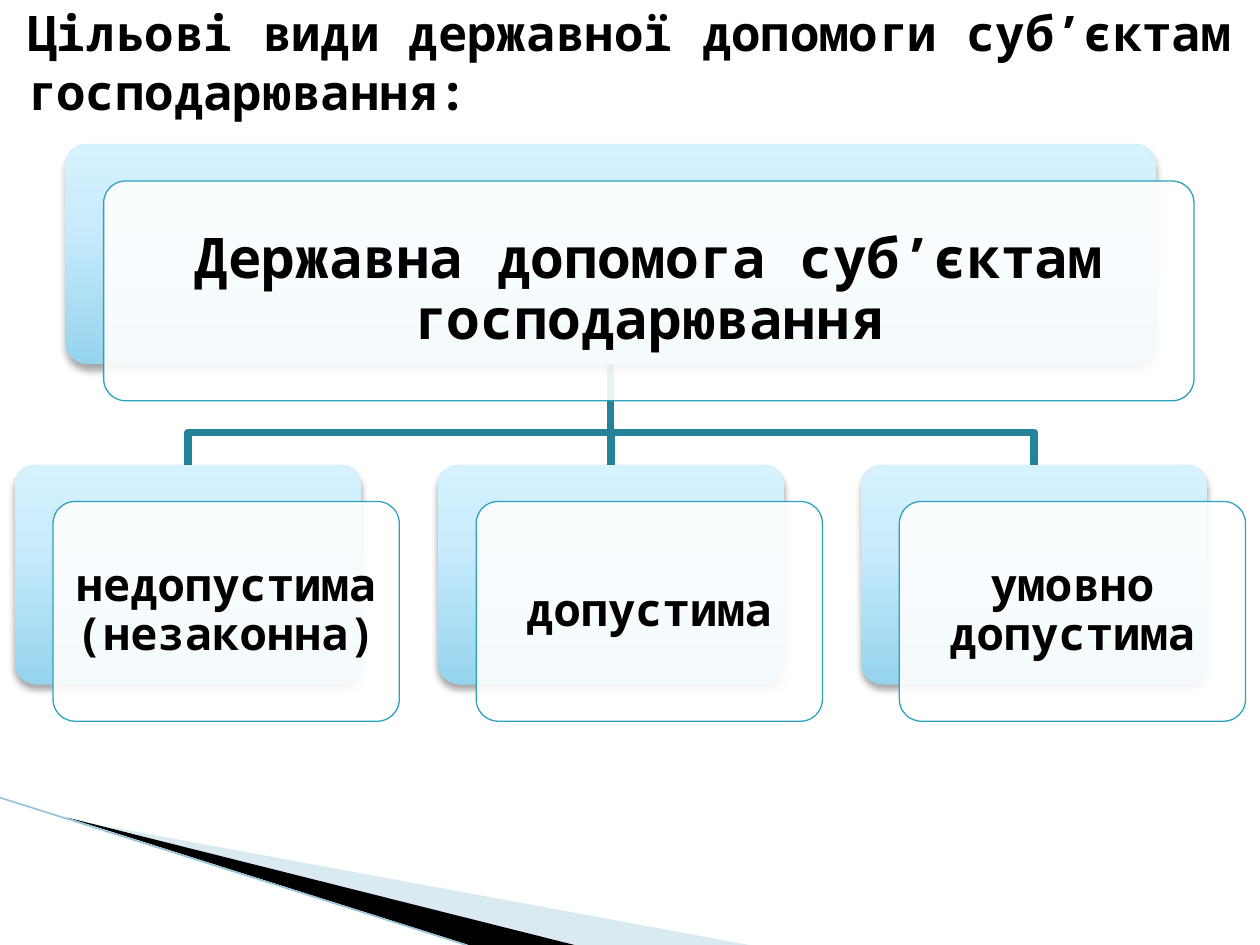
import copy

import pptx
import pptx.dml.color
import pptx.enum.shapes
import pptx.enum.text
import pptx.oxml
import pptx.oxml.ns
import pptx.util

Cm = pptx.util.Cm
Pt = pptx.util.Pt
RGBColor = pptx.dml.color.RGBColor
qn = pptx.oxml.ns.qn
ROUNDED = pptx.enum.shapes.MSO_SHAPE.ROUNDED_RECTANGLE
MIDDLE = pptx.enum.text.MSO_ANCHOR.MIDDLE

BLACK = RGBColor(0x00, 0x00, 0x00)
WHITE = RGBColor(0xFF, 0xFF, 0xFF)
PALE_BLUE = RGBColor(0xA0, 0xCB, 0xDC)
EDGE_BLUE = RGBColor(0x97, 0xC5, 0xD8)
BRANCH_TEAL = RGBColor(0x24, 0x82, 0x99)
CARD_TEAL = RGBColor(0x2D, 0xA2, 0xBF)
GRADIENT = [(0, RGBColor(0x96, 0xD4, 0xEE)),
            (0.65, RGBColor(0xC9, 0xEC, 0xFC)),
            (1, RGBColor(0xD7, 0xF2, 0xFF))]
FONT = "Noto Sans Mono"
NS = 'xmlns:a="http://schemas.openxmlformats.org/drawingml/2006/main"'
SHADOW = (f'<a:effectLst {NS}><a:outerShdw blurRad="50800" dist="38100" dir="5400000" '
          'rotWithShape="0"><a:srgbClr val="000000"><a:alpha val="35000"/></a:srgbClr>'
          '</a:outerShdw></a:effectLst>')


def draw_path(points, closed):
    """Add a freeform through points given in centimetres."""
    corners = [(Cm(x), Cm(y)) for x, y in points]
    builder = page.shapes.build_freeform(*corners[0])
    builder.add_line_segments(corners[1:], close=closed)
    shape = builder.convert_to_shape()
    shape.shadow.inherit = False
    return shape


def set_opacity(shape, percent):
    color = shape._element.spPr.find(qn("a:solidFill"))[0]
    color.append(pptx.oxml.parse_xml(f'<a:alpha {NS} val="{percent * 1000}"/>'))


deck = pptx.Presentation()
deck.slide_width = Cm(25.4)
deck.slide_height = Cm(19.05)
page = deck.slides.add_slide(deck.slide_layouts[5])

# Corner decoration
wedges = [([(1.4, 16.52), (15.1, 19.05), (11.58, 19.05)], PALE_BLUE, 40),
          ([(1.35, 16.48), (11.58, 19.05), (9.45, 19.05)], BLACK, 100)]
for points, color, opacity in wedges:
    wedge = draw_path(points, True)
    wedge.fill.solid()
    wedge.fill.fore_color.rgb = color
    set_opacity(wedge, opacity)
    wedge.line.fill.background()

edge = page.shapes.add_connector(pptx.enum.shapes.MSO_CONNECTOR.STRAIGHT,
                                 Cm(0), Cm(16.08), Cm(9.4), Cm(19.05))
edge.line.color.rgb = EDGE_BLUE
edge.line.width = Pt(0.95)
edge._element.spPr.append(pptx.oxml.parse_xml(f"<a:effectLst {NS}/>"))

# Hierarchy: one root above three kinds of aid
card_height = 4.43
offset_x, offset_y = 0.77, 0.74
root_left, root_top, root_width = 1.32, 2.91, 21.98
kind_left, kind_top, kind_width, kind_step = 0.3, 9.37, 6.98, 8.53
kinds = ["недопустима (незаконна)", "допустима", "умовно допустима"]

root_center = root_left + root_width / 2
root_bottom = root_top + card_height
elbow_y = 8.72
cards = [("Державна допомога суб’єктам господарювання",
          root_left, root_top, root_width, 32, 0.33)]
for index, label in enumerate(kinds):
    left = kind_left + index * kind_step
    center = left + kind_width / 2
    branch = draw_path([(root_center, root_bottom), (root_center, elbow_y),
                        (center, elbow_y), (center, kind_top)], False)
    branch.fill.background()
    branch.line.color.rgb = BRANCH_TEAL
    branch.line.width = Pt(4.33)
    cards.append((label, left, kind_top, kind_width, 26, 0.28))

for label, left, top, width, size, inset in cards:
    back = page.shapes.add_shape(ROUNDED, Cm(left), Cm(top), Cm(width), Cm(card_height))
    back.adjustments[0] = 0.1
    back.line.fill.background()
    back.fill.gradient()
    back.fill.gradient_angle = 90
    stop_list = back._element.spPr.find(qn("a:gradFill")).find(qn("a:gsLst"))
    stop_list.append(copy.deepcopy(stop_list[-1]))
    for stop, (position, color) in zip(back.fill.gradient_stops, GRADIENT):
        stop.position = position
        stop.color.rgb = color
    back._element.spPr.append(pptx.oxml.parse_xml(SHADOW))

    card = page.shapes.add_shape(ROUNDED, Cm(left + offset_x), Cm(top + offset_y),
                                 Cm(width), Cm(card_height))
    card.adjustments[0] = 0.1
    card.shadow.inherit = False
    card.fill.solid()
    card.fill.fore_color.rgb = WHITE
    set_opacity(card, 90)
    card.line.color.rgb = CARD_TEAL
    card.line.width = Pt(0.75)

    frame = card.text_frame
    frame.text = label
    frame.word_wrap = True
    frame.vertical_anchor = MIDDLE
    frame.margin_left = frame.margin_right = Cm(inset)
    frame.margin_top = frame.margin_bottom = Cm(inset)
    para = frame.paragraphs[0]
    para.alignment = pptx.enum.text.PP_ALIGN.CENTER
    para.line_spacing = 0.9
    span = para.runs[0]
    span.font.name = FONT
    span.font.size = Pt(size)
    span.font.bold = True
    span.font.color.rgb = BLACK

# Title
title = page.shapes.title
title.left, title.top = Cm(0.3), Cm(0.33)
title.width, title.height = Cm(24.8), Cm(1.8)
frame = title.text_frame
frame.text = "Цільові види державної допомоги суб’єктам господарювання:"
frame.word_wrap = True
frame.auto_size = pptx.enum.text.MSO_AUTO_SIZE.NONE
frame.vertical_anchor = MIDDLE
frame.margin_left, frame.margin_right = Cm(0.25), Cm(0.1)
para = frame.paragraphs[0]
para.alignment = pptx.enum.text.PP_ALIGN.LEFT
span = para.runs[0]
span.font.name = FONT
span.font.size = Pt(28)
span.font.bold = True
span.font.color.rgb = BLACK

deck.save("out.pptx")
